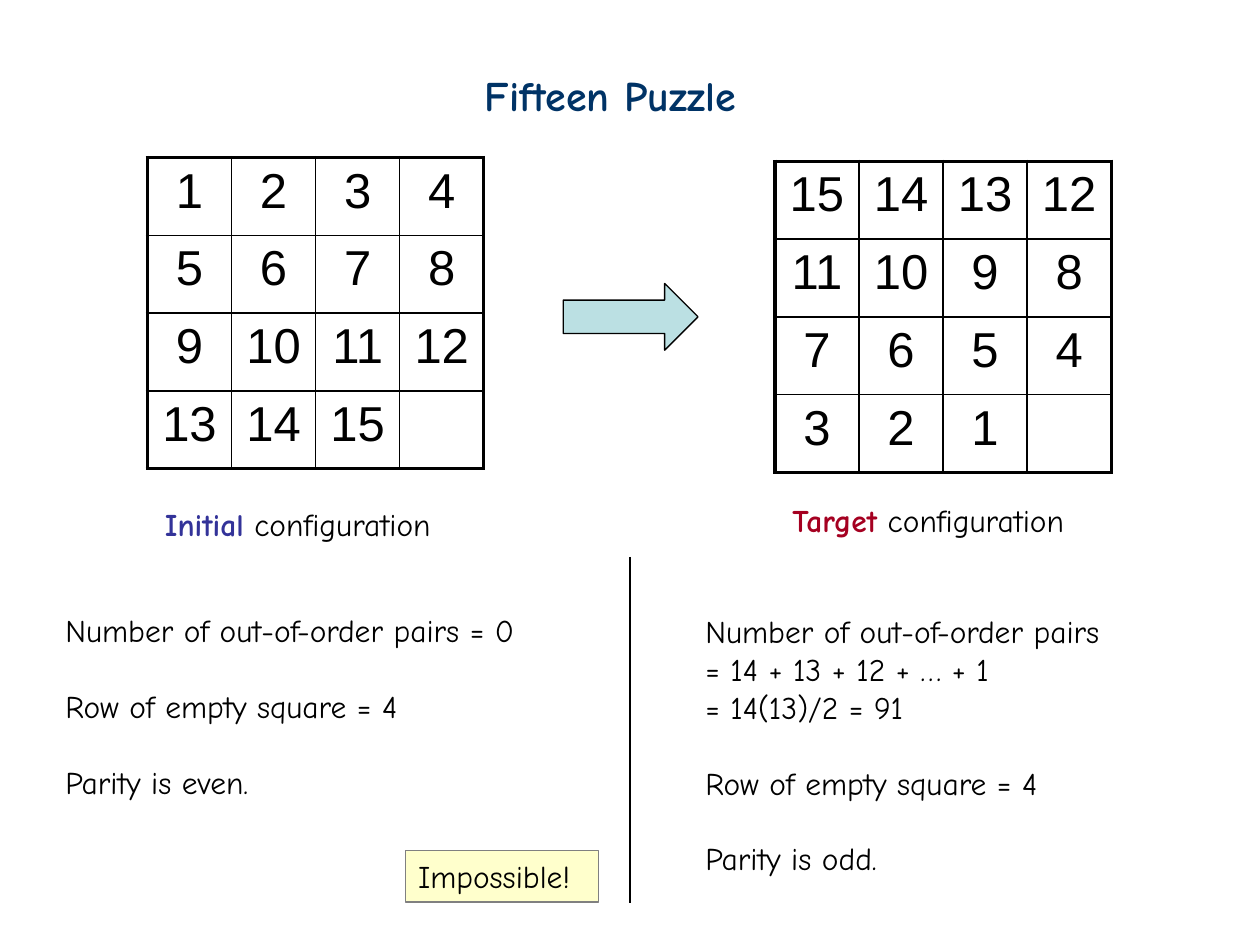
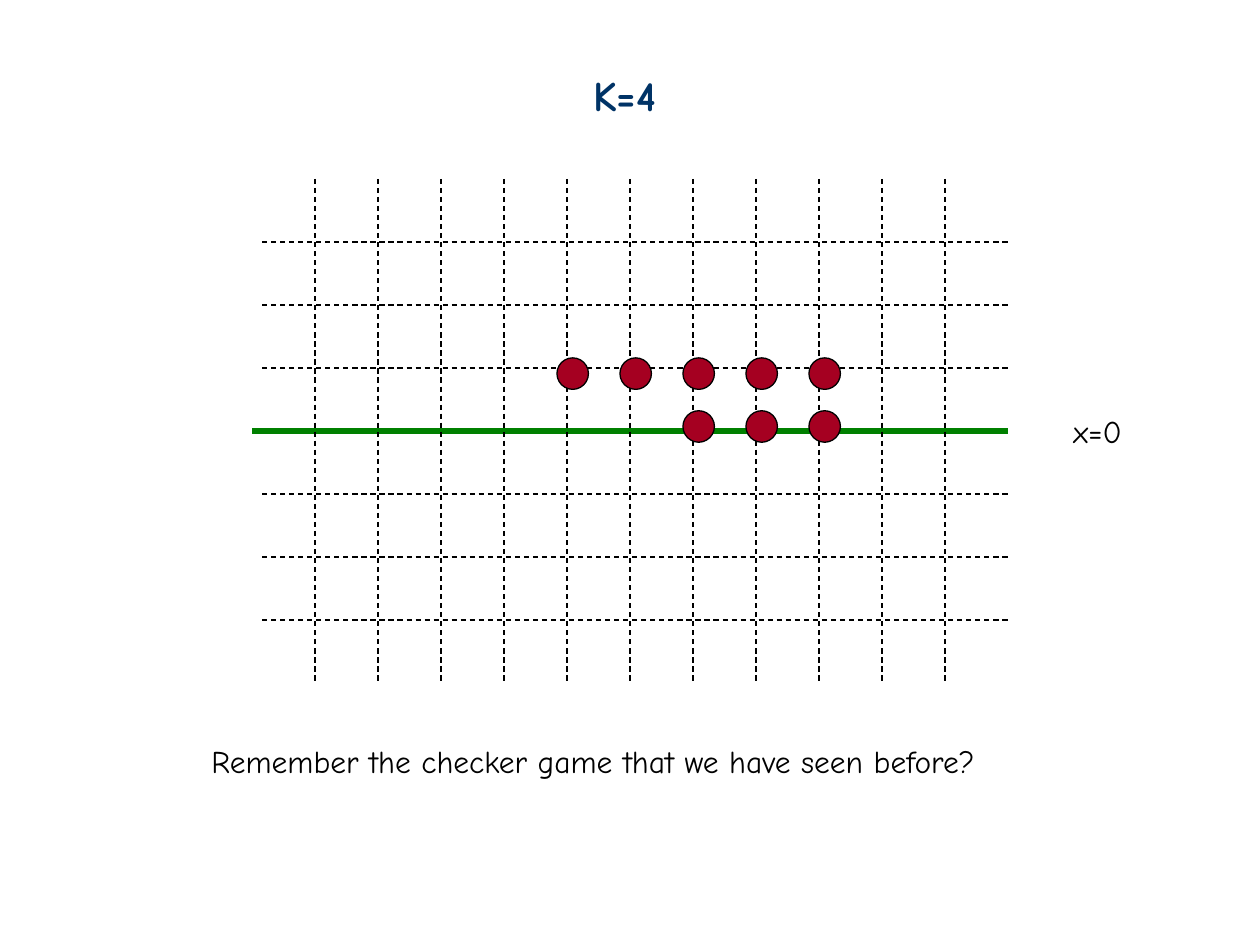
from lxml import etree
from pptx import Presentation
from pptx.dml.color import RGBColor
from pptx.enum.dml import MSO_LINE
from pptx.enum.shapes import MSO_CONNECTOR, MSO_SHAPE
from pptx.enum.text import MSO_ANCHOR, PP_ALIGN
from pptx.oxml.ns import qn
from pptx.util import Inches, Pt

STRAIGHT = MSO_CONNECTOR.STRAIGHT
DASH = MSO_LINE.DASH
RIGHT_ARROW = MSO_SHAPE.RIGHT_ARROW
RECTANGLE = MSO_SHAPE.RECTANGLE
OVAL = MSO_SHAPE.OVAL
TOP = MSO_ANCHOR.TOP
LEFT, CENTER = PP_ALIGN.LEFT, PP_ALIGN.CENTER

NAVY, BLUE, RED = "003366", "333399", "A50021"
BLACK, GRAY, GREEN = "000000", "808080", "008000"
PALE_TEAL, PALE_YELLOW = "BBE0E3", "FFFFCC"

INITIAL_TILES = [*range(1, 16), ""]
TARGET_TILES = [*range(15, 0, -1), ""]


def rgb(color):
    return RGBColor.from_string(color)


class Deck:
    """Holds the shared style and the slide being filled."""

    text_font, tile_font = "Comic Neue", "Arial"
    text_size, title_size, tile_size = 18, 24, 28
    group_gap = Pt(21.7)
    thin, frame, cell_line = 0.75, 2.25, 1

    def __init__(self):
        self.prs = Presentation()
        self.prs.slide_width, self.prs.slide_height = Inches(10), Inches(7.5)
        self.slide = None

    def new_slide(self, title, left, width):
        self.slide = self.prs.slides.add_slide(self.prs.slide_layouts[6])
        self.text([[title]], left, 0.5, width, 0.5,
                  size=self.title_size, color=NAVY, bold=True)

    def style_run(self, run, size, color, bold=False, font=text_font):
        run.font.name, run.font.size, run.font.bold = font, Pt(size), bold
        run.font.color.rgb = rgb(color)

    def text(self, groups, left, top, width, height,
             size=text_size, color=BLACK, bold=False):
        """Write groups of lines, with a gap the height of a line between groups."""
        box = self.slide.shapes.add_textbox(
            Inches(left), Inches(top), Inches(width), Inches(height))
        frame = box.text_frame
        frame.word_wrap = True
        frame.text = "\n".join(line for group in groups for line in group)
        paragraphs = iter(frame.paragraphs)
        for group_index, group in enumerate(groups):
            for line_index in range(len(group)):
                paragraph = next(paragraphs)
                if group_index and not line_index:
                    paragraph.space_before = self.group_gap
                self.style_run(paragraph.runs[0], size, color, bold)
        return box

    def caption(self, keyword, color, left, top, width):
        box = self.text([[keyword]], left, top, width, 0.4, color=color, bold=True)
        rest = box.text_frame.paragraphs[0].add_run()
        rest.text = " configuration"
        self.style_run(rest, self.text_size, BLACK)

    def shape(self, preset, left, top, width, height, fill, outline=BLACK):
        shape = self.slide.shapes.add_shape(
            preset, Inches(left), Inches(top), Inches(width), Inches(height))
        shape.shadow.inherit = False
        shape.fill.solid()
        shape.fill.fore_color.rgb = rgb(fill)
        shape.line.color.rgb = rgb(outline)
        shape.line.width = Pt(self.thin)
        return shape

    def callout(self, words, left, top, width, height):
        box = self.shape(RECTANGLE, left, top, width, height, PALE_YELLOW, GRAY)
        frame = box.text_frame
        frame.text = words
        frame.word_wrap = True
        frame.vertical_anchor = TOP
        frame.paragraphs[0].alignment = LEFT
        self.style_run(frame.paragraphs[0].runs[0], self.text_size, BLACK)

    def line(self, x1, y1, x2, y2, color=BLACK, width=thin, dash=None):
        line = self.slide.shapes.add_connector(
            STRAIGHT, Inches(x1), Inches(y1), Inches(x2), Inches(y2))
        line.line.color.rgb = rgb(color)
        line.line.width = Pt(width)
        if dash is not None:
            line.line.dash_style = dash
        etree.SubElement(line._element.spPr, qn("a:effectLst"))

    def cell_borders(self, cell, widths):
        """Draw black borders; widths maps the sides L, R, T, B to points."""
        properties = cell._tc.get_or_add_tcPr()
        for side, width in widths.items():
            border = etree.SubElement(properties, qn(f"a:ln{side}"), w=str(Pt(width)))
            fill = etree.SubElement(border, qn("a:solidFill"))
            etree.SubElement(fill, qn("a:srgbClr"), val=BLACK)

    def puzzle(self, tiles, left, top, width=2.67, height=2.47, count=4):
        board = self.slide.shapes.add_table(
            count, count, Inches(left), Inches(top), Inches(width), Inches(height)).table
        board.first_row = board.horz_banding = False
        last = count - 1
        for index, tile in enumerate(tiles):
            row, column = divmod(index, count)
            cell = board.cell(row, column)
            at_edge = {"L": column == 0, "R": column == last,
                       "T": row == 0, "B": row == last}
            self.cell_borders(cell, {side: self.frame if edge else self.cell_line
                                     for side, edge in at_edge.items()})
            cell.fill.background()
            cell.text_frame.text = str(tile)
            paragraph = cell.text_frame.paragraphs[0]
            paragraph.alignment = CENTER
            for run in paragraph.runs:
                self.style_run(run, self.tile_size, BLACK, font=self.tile_font)


def fifteen_puzzle(deck):
    deck.new_slide("Fifteen Puzzle", 3.75, 2.5)
    deck.puzzle(INITIAL_TILES, 1.17, 1.25)
    deck.puzzle(TARGET_TILES, 6.15, 1.28)
    deck.shape(RIGHT_ARROW, 4.47, 2.25, 1.07, 0.53, PALE_TEAL)
    deck.caption("Initial", BLUE, 1.21, 3.96, 2.59)
    deck.caption("Target", RED, 6.19, 3.93, 2.65)
    deck.line(5, 4.42, 5, 7.17)

    empty_row = ["Row of empty square = 4"]
    deck.text([["Number of out-of-order pairs = 0"], empty_row, ["Parity is even."]],
              0.42, 4.8, 4.12, 1.6)
    pair_count = ["Number of out-of-order pairs", "= 14 + 13 + 12 + … + 1",
                  "= 14(13)/2 = 91"]
    deck.text([pair_count, empty_row, ["Parity is odd."]], 5.5, 4.81, 3.76, 2.2)
    deck.callout("Impossible!", 3.22, 6.75, 1.53, 0.41)


def checker_game(deck):
    deck.new_slide("K=4", 4.61, 0.81)
    step, axis_y, right = 0.5, 3.42, 8
    deck.line(2, axis_y, right, axis_y, GREEN, 3)
    deck.text([["x=0"]], 8.42, 3.22, 0.63, 0.4)
    for offset in (-3, -2, -1, 1, 2, 3):
        y = axis_y + offset * step
        deck.line(2.08, y, right, y, dash=DASH)
    for column in range(11):
        x = 2.5 + column * step
        deck.line(x, 1.42, x, 5.42, dash=DASH)

    for top, first_column in ((3.26, 2), (2.84, 0)):
        for column in range(first_column, 5):
            deck.shape(OVAL, 4.42 + column * step, top, 0.25, 0.25, RED)
    deck.text([["Remember the checker game that we have seen before?"]],
              1.58, 5.84, 6.75, 0.4)


def main():
    deck = Deck()
    fifteen_puzzle(deck)
    checker_game(deck)
    deck.prs.save("out.pptx")


if __name__ == "__main__":
    main()
